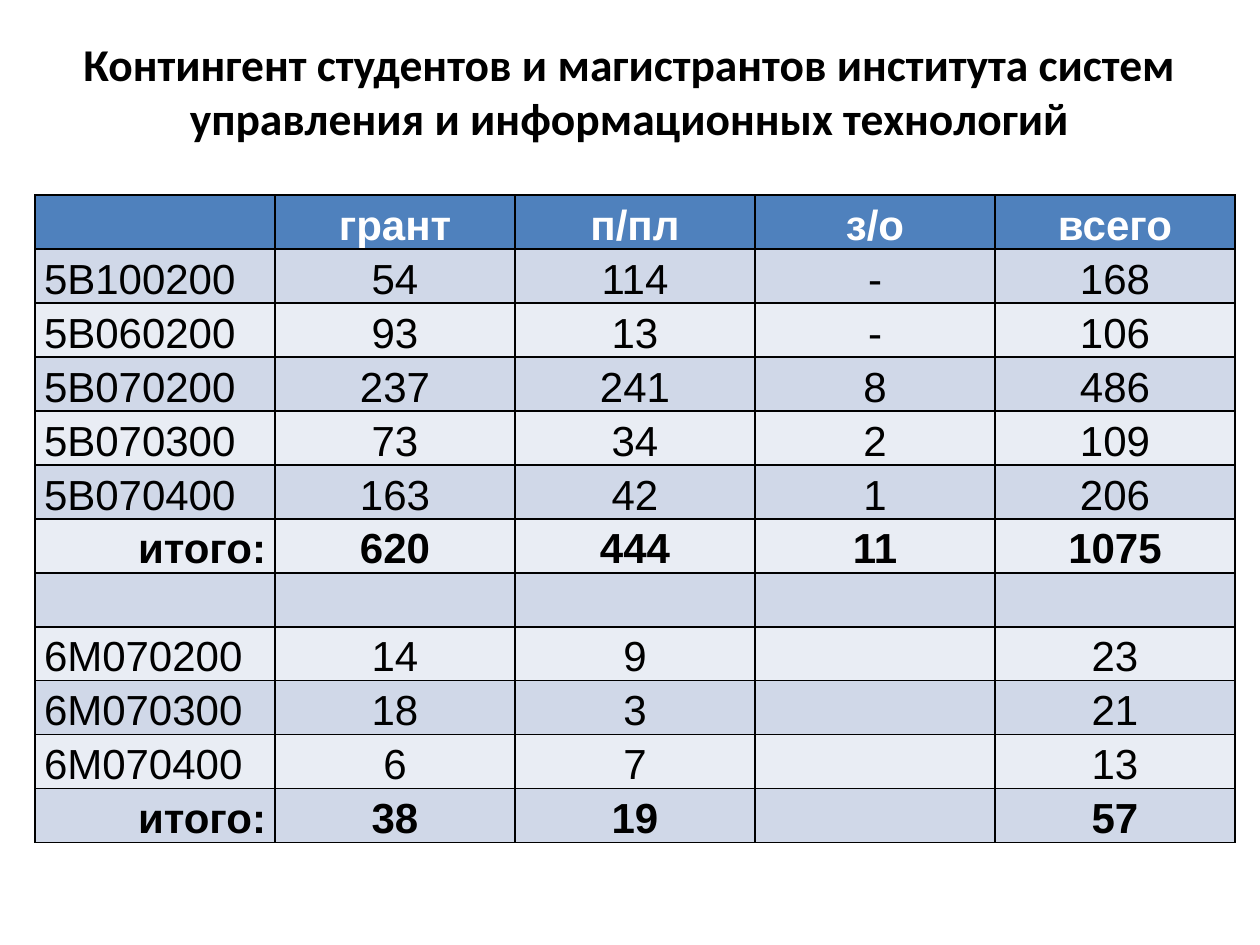
from lxml import etree
from pptx import Presentation, util as u
from pptx.dml.color import RGBColor
from pptx.enum import text
from pptx.oxml import ns

BLACK = RGBColor(0x00, 0x00, 0x00)
WHITE = RGBColor(0xFF, 0xFF, 0xFF)
BLUE = RGBColor(0x4F, 0x81, 0xBD)
BAND_DARK = RGBColor(0xD0, 0xD8, 0xE8)
BAND_LIGHT = RGBColor(0xE9, 0xED, 0xF4)

TITLE = "Контингент студентов и магистрантов института систем управления и информационных технологий"
TOTAL = "итого:"
ROWS = [
    ("", "грант", "п/пл", "з/о", "всего"),
    ("5В100200", "54", "114", "-", "168"),
    ("5В060200", "93", "13", "-", "106"),
    ("5В070200", "237", "241", "8", "486"),
    ("5В070300", "73", "34", "2", "109"),
    ("5В070400", "163", "42", "1", "206"),
    (TOTAL, "620", "444", "11", "1075"),
    ("", "", "", "", ""),
    ("6М070200", "14", "9", "", "23"),
    ("6М070300", "18", "3", "", "21"),
    ("6М070400", "6", "7", "", "13"),
    (TOTAL, "38", "19", "", "57"),
]
COL_W, ROW_H = 240, 54


def px(n):
    return u.Emu(round(n * 914400 / 126))


def add_borders(cell):
    tcPr = cell._tc.get_or_add_tcPr()
    for i, side in enumerate(("lnL", "lnR", "lnT", "lnB")):
        ln = etree.Element(ns.qn("a:" + side), w=str(u.Pt(1)))
        fill = etree.SubElement(ln, ns.qn("a:solidFill"))
        etree.SubElement(fill, ns.qn("a:srgbClr"), val=str(BLACK))
        tcPr.insert(i, ln)


prs = Presentation()
prs.slide_width, prs.slide_height = px(1260), px(945)
s = prs.slides.add_slide(prs.slide_layouts[5])

title = s.shapes.title
title.left, title.top, title.width, title.height = px(63), px(26), px(1134), px(129)
tf = title.text_frame
tf.text = TITLE
tf.vertical_anchor = text.MSO_ANCHOR.MIDDLE
p = tf.paragraphs[0]
p.alignment = text.PP_ALIGN.CENTER
p.font.name, p.font.size, p.font.bold = "Calibri", u.Pt(26), True
p.font.color.rgb = BLACK

n_cols = len(ROWS[0])
table = s.shapes.add_table(
    len(ROWS), n_cols, px(35), px(195), px(COL_W * n_cols), px(ROW_H * len(ROWS))
).table
for col in table.columns:
    col.width = px(COL_W)

for r, values in enumerate(ROWS):
    table.rows[r].height = px(ROW_H)
    header, total = r == 0, values[0] == TOTAL
    band = BLUE if header else BAND_DARK if r % 2 else BAND_LIGHT
    for c, value in enumerate(values):
        cell = table.cell(r, c)
        cell.fill.solid()
        cell.fill.fore_color.rgb = band
        add_borders(cell)
        cell.vertical_anchor = text.MSO_ANCHOR.BOTTOM
        cell.margin_left = cell.margin_right = px(9)
        cell.margin_top = cell.margin_bottom = 0
        cell.text = value
        p = cell.text_frame.paragraphs[0]
        p.line_spacing = 1.15
        if c:
            p.alignment = text.PP_ALIGN.CENTER
        else:
            p.alignment = text.PP_ALIGN.RIGHT if total else text.PP_ALIGN.LEFT
        p.font.name, p.font.size = "Arial", u.Pt(24)
        p.font.bold = header or total
        p.font.color.rgb = WHITE if header else BLACK

prs.save("out.pptx")
